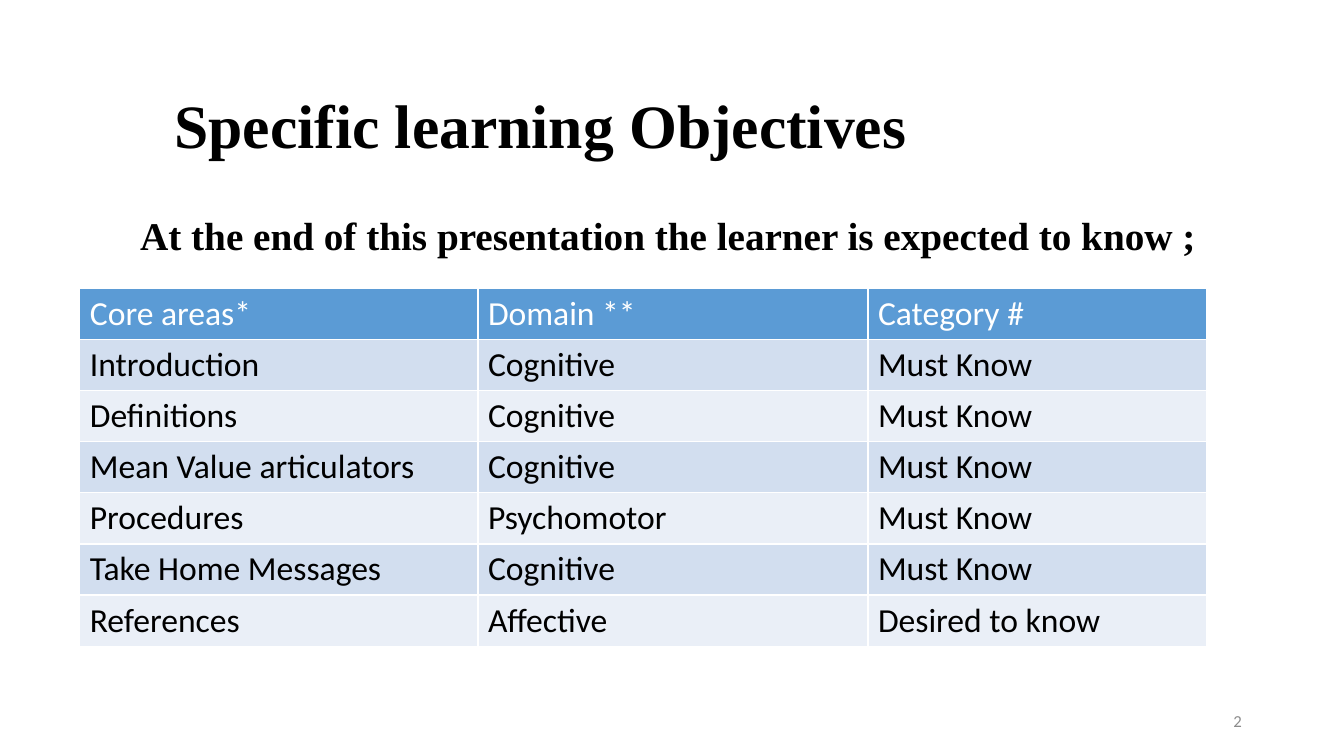
from dataclasses import dataclass

from lxml.etree import SubElement
from pptx import Presentation
from pptx.dml.color import RGBColor
from pptx.enum.text import MSO_ANCHOR, MSO_AUTO_SIZE, PP_ALIGN
from pptx.oxml.ns import qn
from pptx.util import Pt


@dataclass(frozen=True)
class Theme:
    heading_font: str = "Times New Roman"
    body_font: str = "Calibri"
    title_size: int = 44
    lead_size: int = 28
    table_size: int = 24
    number_size: int = 12
    ink: str = "000000"
    header_ink: str = "FFFFFF"
    number_ink: str = "8C8C8C"
    header_fill: str = "5B9BD5"
    bands: tuple = ("D2DEEF", "EAEFF7")


class SlideBuilder:
    def __init__(self, slide, theme):
        self.s = slide
        self.theme = theme

    def style(self, p, name, size, color, bold=False):
        p.font.name = name
        p.font.size = Pt(size)
        p.font.bold = bold
        p.font.color.rgb = RGBColor.from_string(color)

    def title(self, text, left, top, width, height):
        t = self.theme
        sp = self.s.shapes.title
        sp.left, sp.top, sp.width, sp.height = map(Pt, (left, top, width, height))
        tf = sp.text_frame
        tf.text = text
        tf.auto_size = MSO_AUTO_SIZE.NONE
        tf.vertical_anchor = MSO_ANCHOR.MIDDLE
        p = tf.paragraphs[0]
        p.alignment = PP_ALIGN.LEFT
        p.line_spacing = 0.9
        self.style(p, t.heading_font, t.title_size, t.ink, bold=True)

    def text_box(self, left, top, width, height):
        tf = self.s.shapes.add_textbox(*map(Pt, (left, top, width, height))).text_frame
        tf.word_wrap = True
        return tf

    def lead(self, text, left, top, width, height):
        t = self.theme
        tf = self.text_box(left, top, width, height)
        tf.text = text
        self.style(tf.paragraphs[0], t.heading_font, t.lead_size, t.ink, bold=True)

    def table(self, rows, left, top, widths, row_height):
        t = self.theme
        frame = self.s.shapes.add_table(
            len(rows), len(widths), Pt(left), Pt(top),
            Pt(sum(widths)), Pt(row_height * len(rows)))
        table = frame.table
        for column, width in zip(table.columns, widths):
            column.width = Pt(width)
        for i, row in enumerate(rows):
            fill = t.bands[(i - 1) % 2] if i else t.header_fill
            ink = t.ink if i else t.header_ink
            for j, text in enumerate(row):
                cell = table.cell(i, j)
                cell.text = text
                cell.fill.solid()
                cell.fill.fore_color.rgb = RGBColor.from_string(fill)
                self.style(cell.text_frame.paragraphs[0], t.body_font, t.table_size, ink)

    def slide_number(self, number, left, top, width, height):
        t = self.theme
        tf = self.text_box(left, top, width, height)
        tf.vertical_anchor = MSO_ANCHOR.MIDDLE
        p = tf.paragraphs[0]
        p.alignment = PP_ALIGN.RIGHT
        self.style(p, t.body_font, t.number_size, t.number_ink)
        field = SubElement(p._p, qn("a:fld"), type="slidenum",
                           id="{B6F15528-21DE-4FAA-801E-634DDDAF4B2B}")
        SubElement(field, qn("a:rPr"), lang="en-US")
        SubElement(field, qn("a:t")).text = str(number)


OBJECTIVES = [
    ("Core areas*", "Domain **", "Category #"),
    ("Introduction", "Cognitive", "Must Know"),
    ("Definitions", "Cognitive", "Must Know"),
    ("Mean Value articulators", "Cognitive", "Must Know"),
    ("Procedures", "Psychomotor", "Must Know"),
    ("Take Home Messages", "Cognitive", "Must Know"),
    ("References", "Affective", "Desired to know"),
]


def main():
    prs = Presentation()
    prs.slide_width, prs.slide_height = Pt(960), Pt(540)
    prs.element.set("firstSlideNum", "2")
    slide = SlideBuilder(prs.slides.add_slide(prs.slide_layouts[5]), Theme())
    slide.title("Specific learning Objectives", 117.4, 48.2, 729.4, 87.1)
    slide.table(OBJECTIVES, 57, 206, (284.4, 278.6, 242), 36)
    slide.lead("At the end of this presentation the learner is expected to know ;",
               93, 147.6, 771, 41)
    slide.slide_number(2, 678.2, 500.4, 216, 28.8)
    prs.save("out.pptx")


if __name__ == "__main__":
    main()
